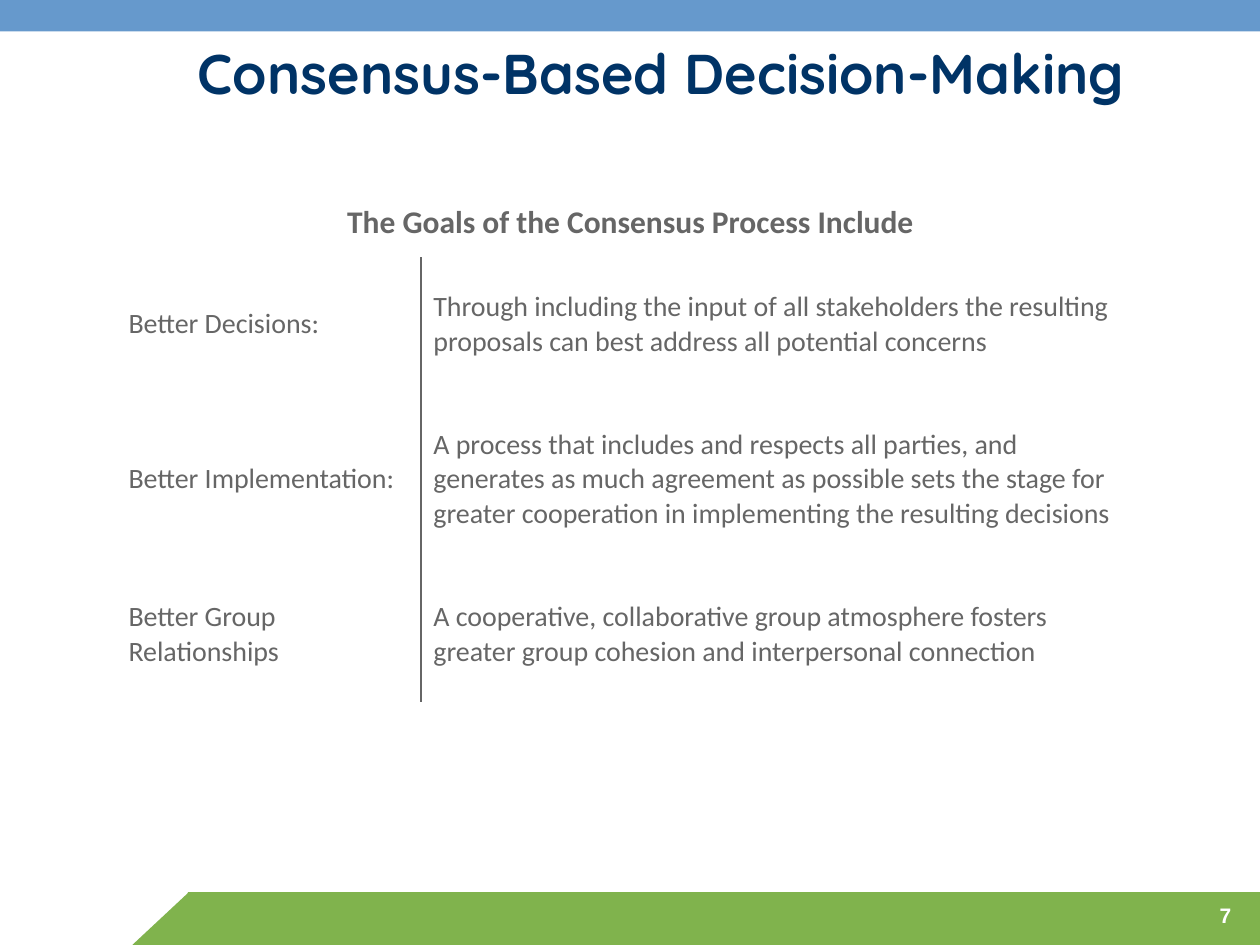
"""Build the consensus-based decision-making slide."""
from dataclasses import dataclass

from lxml import etree
from pptx import Presentation
from pptx.dml.color import RGBColor
from pptx.enum.shapes import MSO_SHAPE
from pptx.enum.text import MSO_ANCHOR, PP_ALIGN
from pptx.oxml.ns import qn
from pptx.util import Inches, Pt

RECT, TRIANGLE = MSO_SHAPE.RECTANGLE, MSO_SHAPE.RIGHT_TRIANGLE
MIDDLE = MSO_ANCHOR.MIDDLE
LEFT, CENTER, RIGHT = PP_ALIGN.LEFT, PP_ALIGN.CENTER, PP_ALIGN.RIGHT


@dataclass(frozen=True)
class Theme:
    """Colours, fonts and type sizes of the slide."""
    navy: str = "003366"
    blue: str = "6699CC"
    green: str = "80B34D"
    gray: str = "666666"
    white: str = "FFFFFF"
    title_font: str = "Quicksand"
    body_font: str = "Calibri"
    number_font: str = "Arial"
    title: int = 32
    heading: int = 18
    body: int = 16
    number: int = 12


THEME = Theme()
HEADING = "The Goals of the Consensus Process Include"
GOALS = [
    ("Better Decisions:",
     "Through including the input of all stakeholders the resulting "
     "proposals can best address all potential concerns"),
    ("Better Implementation:",
     "A process that includes and respects all parties, and generates as much "
     "agreement as possible sets the stage for greater cooperation in "
     "implementing the resulting decisions"),
    ("Better Group Relationships",
     "A cooperative, collaborative group atmosphere fosters greater group "
     "cohesion and interpersonal connection"),
]
COLUMN_WIDTHS = [2.42, 5.75]
ROW_HEIGHTS = [0.54, 1.07, 1.39, 1.07]


def set_text(tf, text, font, size, color, bold=False, align=LEFT):
    """Fill a text frame with one formatted paragraph."""
    tf.text = text
    tf.word_wrap = True
    p = tf.paragraphs[0]
    p.alignment = align
    f = p.runs[0].font
    f.name, f.size, f.bold = font, Pt(size), bold
    f.color.rgb = RGBColor.from_string(color)


def add_band(s, kind, x, y, w, h, color):
    """Add a plain filled shape without outline or shadow."""
    sp = s.shapes.add_shape(kind, Inches(x), Inches(y), Inches(w), Inches(h))
    sp.fill.solid()
    sp.fill.fore_color.rgb = RGBColor.from_string(color)
    sp.line.fill.background()
    sp.shadow.inherit = False
    return sp


def add_title(s, text):
    """Place and format the title, indented half an inch."""
    sp = s.shapes.title
    sp.left, sp.top, sp.width, sp.height = (
        Inches(v) for v in (0, 0.25, 10, 0.64))
    tf = sp.text_frame
    tf.margin_left = Inches(0.6)
    tf.vertical_anchor = MIDDLE
    set_text(tf, text, THEME.title_font, THEME.title, THEME.navy, True, CENTER)


def add_number(s, text):
    """Add the slide number over the footer band."""
    sp = s.shapes.add_textbox(
        Inches(8.79), Inches(7.14), Inches(1.08), Inches(0.25))
    tf = sp.text_frame
    tf.vertical_anchor = MIDDLE
    set_text(tf, text, THEME.number_font, THEME.number, THEME.white, True, RIGHT)


def set_borders(cell, ruled_side):
    """Rule one side of a cell and clear the others."""
    tc_pr = cell._tc.get_or_add_tcPr()
    for i, side in enumerate(("lnL", "lnR", "lnT", "lnB")):
        ln = etree.Element(qn(f"a:{side}"), w=str(Pt(1)))
        if side == ruled_side:
            fill = etree.SubElement(ln, qn("a:solidFill"))
            etree.SubElement(fill, qn("a:srgbClr"), val=THEME.gray)
        else:
            etree.SubElement(ln, qn("a:noFill"))
        tc_pr.insert(i, ln)


def set_cell(cell, text, size, bold=False, align=LEFT, ruled_side=None):
    """Write a table cell with no fill and its text in the middle."""
    set_text(cell.text_frame, text, THEME.body_font, size, THEME.gray, bold, align)
    cell.vertical_anchor = MIDDLE
    cell.fill.background()
    set_borders(cell, ruled_side)


def add_goals_table(s):
    """Add the table of goals under a merged heading row."""
    table = s.shapes.add_table(
        len(ROW_HEIGHTS), len(COLUMN_WIDTHS), Inches(0.92), Inches(1.5),
        Inches(sum(COLUMN_WIDTHS)), Inches(sum(ROW_HEIGHTS))).table
    table.first_row = table.horz_banding = False
    for column, width in zip(table.columns, COLUMN_WIDTHS):
        column.width = Inches(width)
    for row, height in zip(table.rows, ROW_HEIGHTS):
        row.height = Inches(height)
    table.cell(0, 0).merge(table.cell(0, 1))
    set_cell(table.cell(0, 0), HEADING, THEME.heading, True, CENTER)
    for i, (goal, reason) in enumerate(GOALS, 1):
        set_cell(table.cell(i, 0), goal, THEME.body, ruled_side="lnR")
        set_cell(table.cell(i, 1), reason, THEME.body, ruled_side="lnL")


def main():
    """Build and save the slide."""
    prs = Presentation()
    prs.slide_width, prs.slide_height = Inches(10), Inches(7.5)
    s = prs.slides.add_slide(prs.slide_layouts[5])
    add_band(s, RECT, 1.49, 7.08, 8.51, 0.42, THEME.green)
    corner = add_band(s, TRIANGLE, 1.05, 7.08, 0.45, 0.42, THEME.green)
    corner._element.spPr.xfrm.set("flipH", "1")
    add_band(s, RECT, 0, 0, 10, 0.25, THEME.blue)
    add_number(s, "7")
    add_title(s, "Consensus-Based Decision-Making")
    add_goals_table(s)
    prs.save("out.pptx")


if __name__ == "__main__":
    main()
